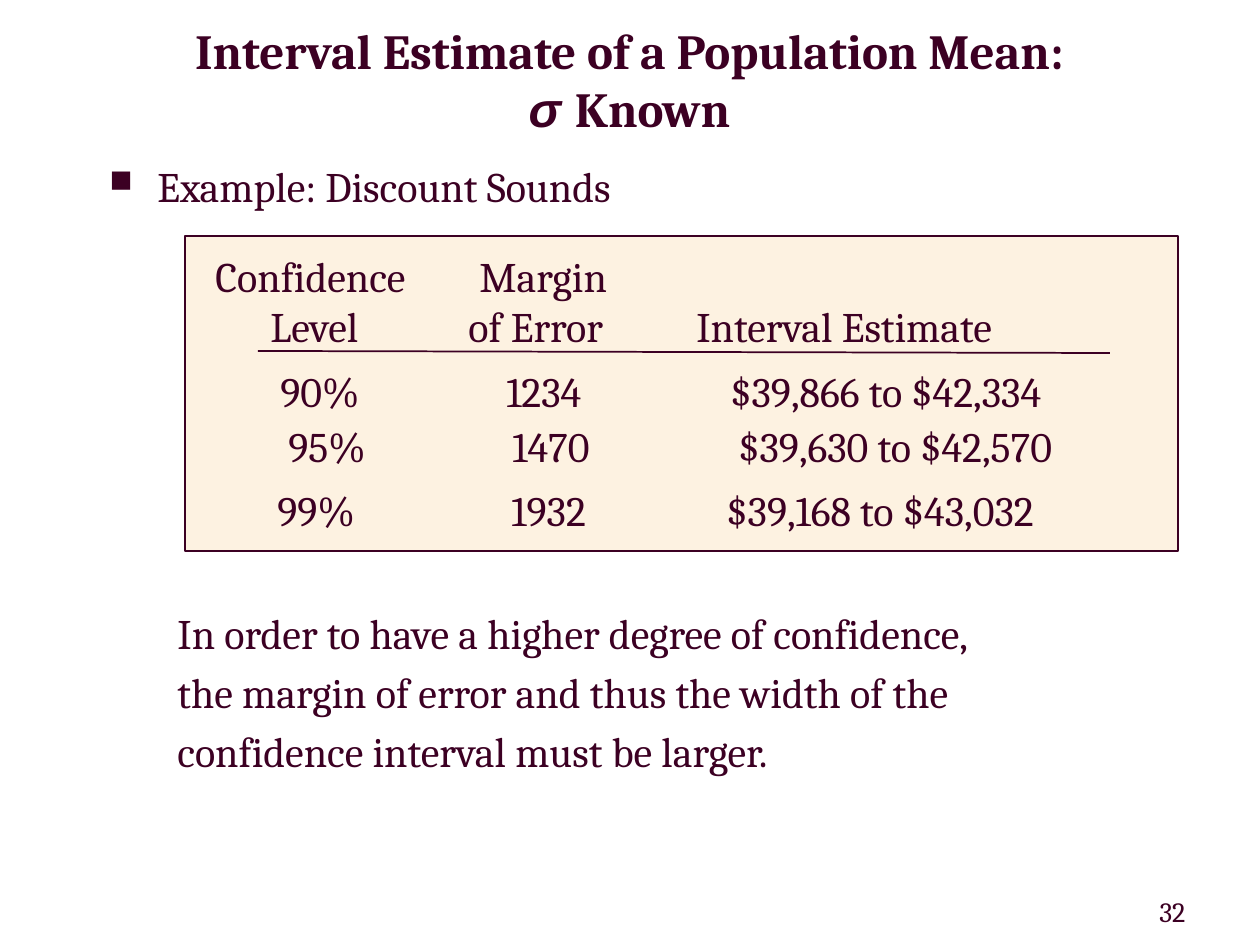
"""Build the slide on interval estimates of a population mean."""
from typing import NamedTuple

import lxml.etree
import pptx
import pptx.dml.color
import pptx.enum.shapes
import pptx.enum.text
import pptx.oxml.ns
import pptx.util

PX = 914400 / 126
INSET = 13
INK = "3C0023"
PANEL = "FDF2E1"
ALIGN = pptx.enum.text.PP_ALIGN
ANCHOR = pptx.enum.text.MSO_ANCHOR


class Box(NamedTuple):
    left: int
    top: int
    width: int
    height: int


class Cell(NamedTuple):
    x: int
    text: str


class Row(NamedTuple):
    box: Box
    lines: list[list[Cell]]
    line_spacing: float = 1.0


class Run(NamedTuple):
    text: str
    font: str = "Cambria"
    italic: bool = False


ROWS = [
    Row(Box(203, 244, 1058, 115), [
        [Cell(215, "Confidence"), Cell(480, "Margin")],
        [Cell(271, "Level"), Cell(469, "of Error"), Cell(697, "Interval Estimate")],
    ]),
    Row(Box(185, 359, 980, 64), [
        [Cell(281, "90%"), Cell(507, "1234"), Cell(731, "$39,866 to $42,334")],
    ]),
    Row(Box(276, 420, 985, 64), [
        [Cell(288, "95%"), Cell(513, "1470"), Cell(739, "$39,630 to $42,570")],
    ], 0.9),
    Row(Box(210, 478, 1003, 64), [
        [Cell(278, "99%"), Cell(512, "1932"), Cell(727, "$39,168 to $43,032")],
    ]),
]


def emu(px: float) -> int:
    return round(px * PX)


def rgb(color: str) -> pptx.dml.color.RGBColor:
    return pptx.dml.color.RGBColor.from_string(color)


def add_xml(parent, tag: str, **attrs):
    return lxml.etree.SubElement(
        parent, pptx.oxml.ns.qn(tag), {k: str(v) for k, v in attrs.items()})


def add_bullet(p, char: str, indent: int) -> None:
    ppr = p._p.get_or_add_pPr()
    ppr.set("marL", str(emu(indent)))
    ppr.set("indent", str(-emu(indent)))
    add_xml(add_xml(ppr, "a:buClr"), "a:srgbClr", val=INK)
    add_xml(ppr, "a:buSzPct", val=75000)
    add_xml(ppr, "a:buChar", char=char)


def add_tabs(p, stops: list[int]) -> None:
    tabs = add_xml(p._p.get_or_add_pPr(), "a:tabLst")
    for stop in stops:
        add_xml(tabs, "a:tab", pos=emu(stop), algn="l")


def add_text(s, box: Box, paragraphs: list[list[Run]], *, size=24, bold=False,
             align=ALIGN.LEFT, anchor=ANCHOR.TOP, gap=0.0, line_spacing=1.0,
             bullet="", tabs=()):
    sp = s.shapes.add_textbox(*map(emu, box))
    tf = sp.text_frame
    tf.word_wrap = True
    tf.vertical_anchor = anchor
    for i, runs in enumerate(paragraphs):
        p = tf.add_paragraph() if i else tf.paragraphs[0]
        if bullet:
            add_bullet(p, bullet, 48)
        if tabs:
            add_tabs(p, tabs[i])
        p.alignment = align
        p.line_spacing = line_spacing
        if i and gap:
            p.space_before = pptx.util.Pt(gap)
        for run in runs:
            if run.text == "\n":
                p.add_line_break()
                continue
            r = p.add_run()
            r.text = run.text
            r.font.name = run.font
            r.font.size = pptx.util.Pt(size)
            r.font.bold = bold
            r.font.italic = run.italic
            r.font.color.rgb = rgb(INK)
    return sp


def add_row(s, row: Row) -> None:
    origin = row.box.left + INSET
    stops, paragraphs = [], []
    for cells in row.lines:
        indented = cells[0].x > origin
        stops.append([c.x - origin for c in cells if c.x > origin])
        text = "\t".join(c.text for c in cells)
        paragraphs.append([Run("\t" + text if indented else text)])
    add_text(s, row.box, paragraphs, tabs=stops, line_spacing=row.line_spacing)


def add_panel(s, box: Box) -> None:
    sp = s.shapes.add_shape(pptx.enum.shapes.MSO_SHAPE.RECTANGLE, *map(emu, box))
    sp.shadow.inherit = False
    sp.fill.solid()
    sp.fill.fore_color.rgb = rgb(PANEL)
    sp.line.color.rgb = rgb(INK)
    sp.line.width = pptx.util.Pt(1)


def add_rule(s, x1: int, y1: int, x2: int, y2: int) -> None:
    line = s.shapes.add_connector(
        pptx.enum.shapes.MSO_CONNECTOR.STRAIGHT, *map(emu, (x1, y1, x2, y2)))
    line.line.color.rgb = rgb(INK)
    line.line.width = pptx.util.Pt(1)
    add_xml(line._element.spPr, "a:effectLst")


def main() -> None:
    prs = pptx.Presentation()
    prs.slide_width = pptx.util.Inches(10)
    prs.slide_height = pptx.util.Inches(7.5)
    s = prs.slides.add_slide(prs.slide_layouts[6])
    add_text(s, Box(1147, 888, 64, 47), [[Run("32")]], size=16)
    add_text(s, Box(94, 23, 1071, 112), [[
        Run("Interval Estimate of a Population Mean:"), Run("\n"),
        Run("σ ", "Arial", True), Run("Known"),
    ]], size=28, bold=True, align=ALIGN.CENTER, anchor=ANCHOR.MIDDLE)
    add_panel(s, Box(185, 236, 993, 315))
    for row in ROWS:
        add_row(s, row)
    add_rule(s, 258, 351, 1110, 353)
    add_text(s, Box(97, 154, 832, 69), [[Run("Example: Discount Sounds")]], bullet="■")
    add_text(s, Box(165, 617, 911, 150), [
        [Run("In order to have a higher degree of confidence,")],
        [Run("the margin of error and thus the width of the")],
        [Run("confidence interval must be larger.")],
    ], align=ALIGN.JUSTIFY, anchor=ANCHOR.MIDDLE, gap=4.8)
    prs.save("out.pptx")


if __name__ == "__main__":
    main()
